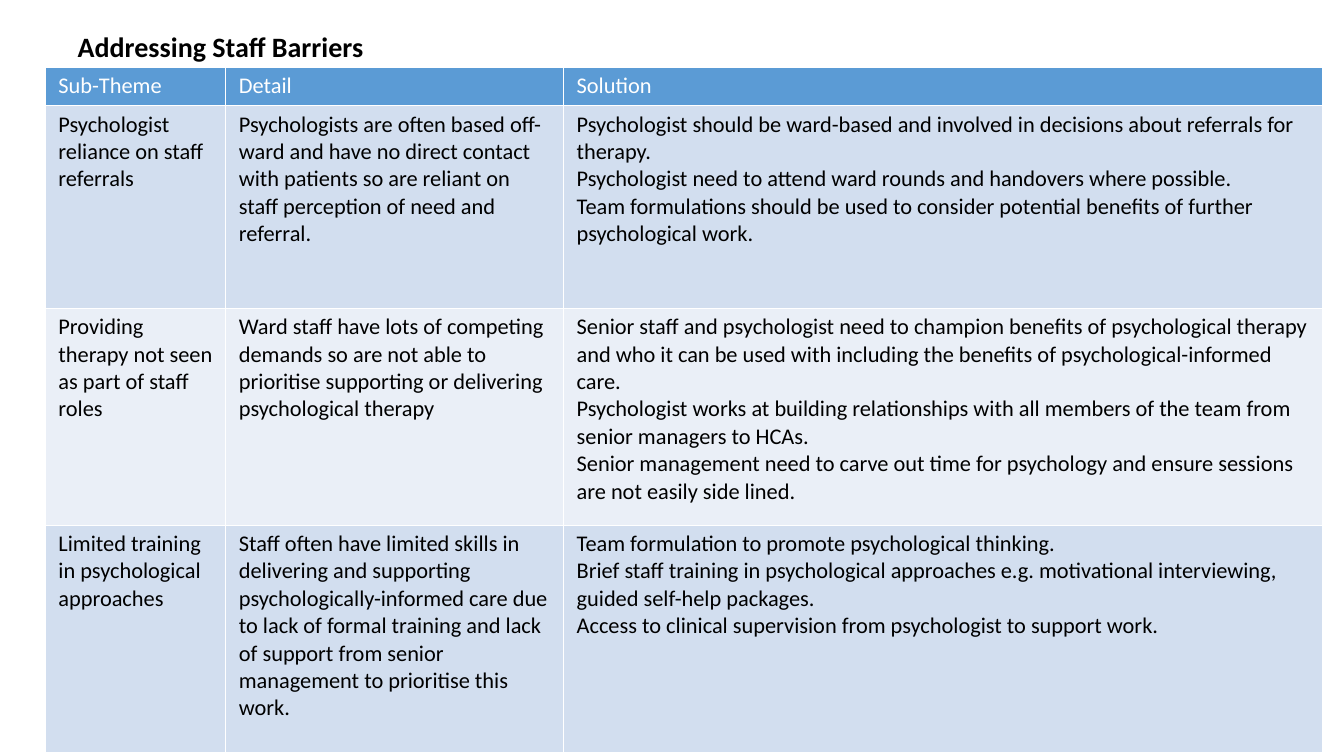
from dataclasses import dataclass

from lxml import etree
from pptx import Presentation
from pptx.dml.color import RGBColor as RGB
from pptx.enum.text import MSO_ANCHOR as ANCHOR, PP_ALIGN as ALIGN
from pptx.oxml.ns import qn
from pptx.util import Inches, Pt


@dataclass(frozen=True)
class Theme:
    font: str = "Calibri"
    title_size: int = 20
    body_size: int = 16
    ink: str = "000000"
    paper: str = "FFFFFF"
    header: str = "5B9BD5"
    bands: tuple = ("EAEFF7", "D2DEEF")


theme = Theme()

COLS = (1.79, 3.35, 7.53)
ROWS = (0.38, 2.01, 2.15, 2.26)
BARRIERS = [
    ("Sub-Theme", "Detail", "Solution"),
    (
        "Psychologist reliance on staff referrals",
        "Psychologists are often based off-ward and have no direct contact with "
        "patients so are reliant on staff perception of need and referral.",
        "Psychologist should be ward-based and involved in decisions about "
        "referrals for therapy.\n"
        "Psychologist need to attend ward rounds and handovers where possible.\n"
        "Team formulations should be used to consider potential benefits of "
        "further psychological work.",
    ),
    (
        "Providing therapy not seen as part of staff roles",
        "Ward staff have lots of competing demands so are not able to prioritise "
        "supporting or delivering psychological therapy",
        "Senior staff and psychologist need to champion benefits of psychological "
        "therapy and who it can be used with including the benefits of "
        "psychological-informed care.\n"
        "Psychologist works at building relationships with all members of the "
        "team from senior managers to HCAs.\n"
        "Senior management need to carve out time for psychology and ensure "
        "sessions are not easily side lined.",
    ),
    (
        "Limited training in psychological approaches",
        "Staff often have limited skills in delivering and supporting "
        "psychologically-informed care due to lack of formal training and lack of "
        "support from senior management to prioritise this work.",
        "Team formulation to promote psychological thinking.\n"
        "Brief staff training in psychological approaches e.g. motivational "
        "interviewing, guided self-help packages.\n"
        "Access to clinical supervision from psychologist to support work.",
    ),
]


def style_font(p, size, color, bold=False):
    p.font.name = theme.font
    p.font.size = Pt(size)
    p.font.bold = bold
    p.font.color.rgb = RGB.from_string(color)


def add_borders(cell, color, width=1):
    tc_pr = cell._tc.get_or_add_tcPr()
    for side in ("lnL", "lnR", "lnT", "lnB"):
        ln = etree.SubElement(tc_pr, qn(f"a:{side}"), w=str(Pt(width)))
        fill = etree.SubElement(ln, qn("a:solidFill"))
        etree.SubElement(fill, qn("a:srgbClr"), val=color)


prs = Presentation()
prs.slide_width, prs.slide_height = Inches(13.33), Inches(7.5)
s = prs.slides.add_slide(prs.slide_layouts[5])

title = s.shapes.title
title.left, title.top = Inches(0.67), Inches(-0.09)
title.width, title.height = Inches(12), Inches(1.15)
tf = title.text_frame
tf.text = "Addressing Staff Barriers"
tf.vertical_anchor = ANCHOR.MIDDLE
p = tf.paragraphs[0]
p.alignment = ALIGN.LEFT
p.line_spacing = 0.9
style_font(p, theme.title_size, theme.ink, bold=True)

table = s.shapes.add_table(
    len(ROWS), len(COLS), Inches(0.45), Inches(0.67),
    Inches(sum(COLS)), Inches(sum(ROWS)),
).table
for column, width in zip(table.columns, COLS):
    column.width = Inches(width)

for i, (row, height, texts) in enumerate(zip(table.rows, ROWS, BARRIERS)):
    row.height = Inches(height)
    fill = theme.bands[i % 2] if i else theme.header
    color = theme.ink if i else theme.paper
    for cell, text in zip(row.cells, texts):
        cell.margin_left = cell.margin_right = Inches(0.13)
        cell.margin_top = cell.margin_bottom = Inches(0.05)
        add_borders(cell, theme.paper)
        cell.fill.solid()
        cell.fill.fore_color.rgb = RGB.from_string(fill)
        cell.text = text
        for p in cell.text_frame.paragraphs:
            style_font(p, theme.body_size, color)

prs.save("out.pptx")
